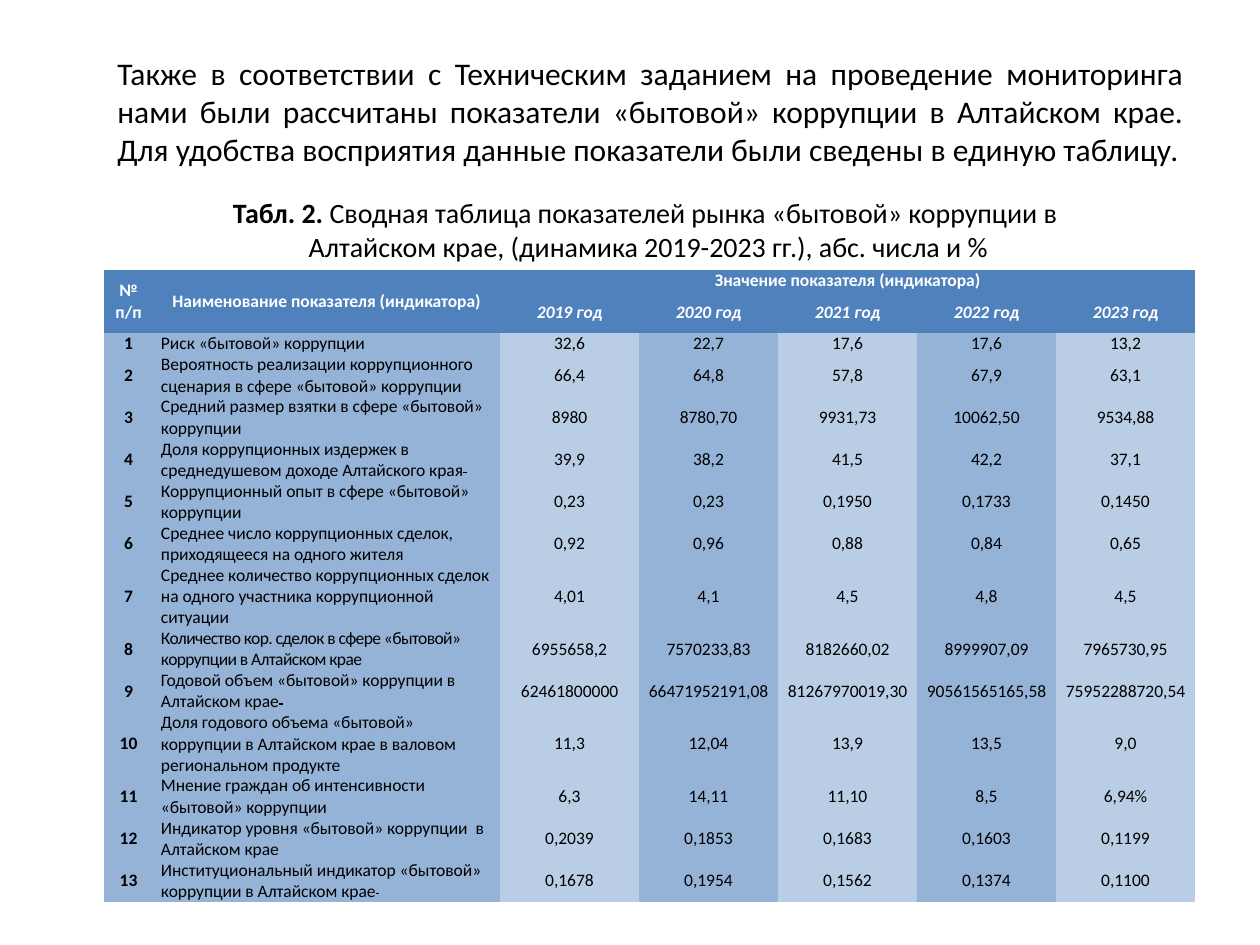
from pptx import Presentation
from pptx.dml.color import RGBColor
from pptx.enum.text import MSO_ANCHOR, MSO_AUTO_SIZE, PP_ALIGN
from pptx.util import Emu, Pt

BLACK = RGBColor(0x00, 0x00, 0x00)
WHITE = RGBColor(0xFF, 0xFF, 0xFF)
HEADER_BLUE = RGBColor(0x4F, 0x81, 0xBD)
MID_BLUE = RGBColor(0x95, 0xB3, 0xD7)
PALE_BLUE = RGBColor(0xB9, 0xCD, 0xE5)

FONT = "Calibri"
NO_STYLE_NO_GRID = "{2D5ABB26-0587-4C30-8999-92F81FD0307C}"
PX_PER_INCH = 126
LINE_HEIGHT = 18
COLUMN_WIDTHS = [49, 347] + [139] * 5

INTRO = (
    "Также в соответствии с Техническим заданием на проведение мониторинга "
    "нами были рассчитаны показатели «бытовой» коррупции в Алтайском крае. "
    "Для удобства восприятия данные показатели были сведены в единую таблицу."
)
CAPTION_LABEL = "Табл. 2. "
CAPTION_LINES = [
    "Сводная таблица показателей рынка «бытовой» коррупции в ",
    "Алтайском крае, (динамика 2019-2023 гг.), абс. числа и %",
]
HEADINGS = ["№ п/п", "Наименование показателя (индикатора)", "Значение показателя (индикатора)"]
YEARS = ["2019 год", "2020 год", "2021 год", "2022 год", "2023 год"]

# Name, lines it takes, values by year
INDICATORS = [
    ("Риск «бытовой» коррупции", 1, ["32,6", "22,7", "17,6", "17,6", "13,2"]),
    ("Вероятность реализации коррупционного сценария в сфере «бытовой» коррупции", 2,
     ["66,4", "64,8", "57,8", "67,9", "63,1"]),
    ("Средний размер взятки в сфере «бытовой» коррупции", 2,
     ["8980", "8780,70", "9931,73", "10062,50", "9534,88"]),
    ("Доля коррупционных издержек в среднедушевом доходе Алтайского края", 2,
     ["39,9", "38,2", "41,5", "42,2", "37,1"]),
    ("Коррупционный опыт в сфере «бытовой» коррупции", 2,
     ["0,23", "0,23", "0,1950", "0,1733", "0,1450"]),
    ("Среднее число коррупционных сделок, приходящееся на одного жителя", 2,
     ["0,92", "0,96", "0,88", "0,84", "0,65"]),
    ("Среднее количество коррупционных сделок на одного участника коррупционной ситуации", 3,
     ["4,01", "4,1", "4,5", "4,8", "4,5"]),
    ("Количество кор. сделок в сфере «бытовой» коррупции в Алтайском крае", 2,
     ["6955658,2", "7570233,83", "8182660,02", "8999907,09", "7965730,95"]),
    ("Годовой объем «бытовой» коррупции в Алтайском крае", 2,
     ["62461800000", "66471952191,08", "81267970019,30", "90561565165,58", "75952288720,54"]),
    ("Доля годового объема «бытовой» коррупции в Алтайском крае в валовом региональном продукте", 3,
     ["11,3", "12,04", "13,9", "13,5", "9,0"]),
    ("Мнение граждан об интенсивности «бытовой» коррупции", 2,
     ["6,3", "14,11", "11,10", "8,5", "6,94%"]),
    ("Индикатор уровня «бытовой» коррупции  в Алтайском крае", 2,
     ["0,2039", "0,1853", "0,1683", "0,1603", "0,1199"]),
    ("Институциональный индикатор «бытовой» коррупции в Алтайском крае", 2,
     ["0,1678", "0,1954", "0,1562", "0,1374", "0,1100"]),
]
STRUCK_SPACE_ROWS = {4, 9, 13}
CONDENSED_ROW = 8


def px(length):
    return Emu(round(length * 914400 / PX_PER_INCH))


def add_span(para, text, size=10, color=BLACK, bold=False, italic=False, **attributes):
    """Add a run; attributes go to its properties element (strike, spc)."""
    span = para.add_run()
    span.text = text
    font = span.font
    font.name, font.size, font.bold, font.italic = FONT, Pt(size), bold, italic
    font.color.rgb = color
    for name, value in attributes.items():
        font._element.set(name, value)


def add_text_box(page, left, top, width, height, anchor):
    box = page.shapes.add_textbox(px(left), px(top), px(width), px(height))
    frame = box.text_frame
    frame.word_wrap = True
    frame.auto_size = MSO_AUTO_SIZE.SHAPE_TO_FIT_TEXT
    frame.vertical_anchor = anchor
    return frame


def fill_cell(cell, text, fill, align=PP_ALIGN.CENTER, **style):
    cell.fill.solid()
    cell.fill.fore_color.rgb = fill
    cell.margin_left = cell.margin_right = px(8)
    cell.margin_top = cell.margin_bottom = 0
    cell.vertical_anchor = MSO_ANCHOR.MIDDLE
    para = cell.text_frame.paragraphs[0]
    para.alignment = align
    add_span(para, text, **style)
    return para


def add_caption(page):
    frame = add_text_box(page, 103, 189, 1091, 81, MSO_ANCHOR.MIDDLE)
    first = frame.paragraphs[0]
    add_span(first, CAPTION_LABEL, size=16, bold=True)
    for para, line in zip([first, frame.add_paragraph()], CAPTION_LINES):
        para.alignment = PP_ALIGN.CENTER
        add_span(para, line, size=16)


def add_intro(page):
    para = add_text_box(page, 105, 48, 1091, 127, MSO_ANCHOR.TOP).paragraphs[0]
    para.alignment = PP_ALIGN.JUSTIFY
    add_span(para, INTRO, size=18)


def add_indicator_table(page):
    line_counts = [1, 1] + [lines for _, lines, _ in INDICATORS]
    holder = page.shapes.add_table(
        len(line_counts), len(COLUMN_WIDTHS), px(104), px(270), px(sum(COLUMN_WIDTHS)), px(609))
    table = holder.table
    table._tbl.tblPr.find("{*}tableStyleId").text = NO_STYLE_NO_GRID
    for column, width in zip(table.columns, COLUMN_WIDTHS):
        column.width = px(width)
    for row, lines in zip(table.rows, line_counts):
        row.height = px(lines * LINE_HEIGHT)
    holder.height = px(609)

    heading_style = dict(fill=HEADER_BLUE, color=WHITE, bold=True)
    for column, heading in enumerate(HEADINGS):
        fill_cell(table.cell(0, column), heading, **heading_style)
    for column, year in enumerate(YEARS, start=2):
        fill_cell(table.cell(1, column), year, italic=True, **heading_style)
    for column in (0, 1):
        table.cell(0, column).merge(table.cell(1, column))
    table.cell(0, 2).merge(table.cell(0, 6))

    for number, (name, _, values) in enumerate(INDICATORS, start=1):
        row = number + 1
        fill_cell(table.cell(row, 0), str(number), MID_BLUE, bold=True)
        spacing = {"spc": "-30"} if number == CONDENSED_ROW else {}
        para = fill_cell(table.cell(row, 1), name, MID_BLUE, align=PP_ALIGN.LEFT, **spacing)
        if number in STRUCK_SPACE_ROWS:
            add_span(para, " ", strike="sngStrike")
        for column, value in enumerate(values, start=2):
            fill_cell(table.cell(row, column), value, MID_BLUE if column % 2 else PALE_BLUE)


def main():
    deck = Presentation()
    deck.slide_width, deck.slide_height = px(1260), px(945)
    page = deck.slides.add_slide(deck.slide_layouts[6])
    add_caption(page)
    add_intro(page)
    add_indicator_table(page)
    deck.save("out.pptx")


if __name__ == "__main__":
    main()
